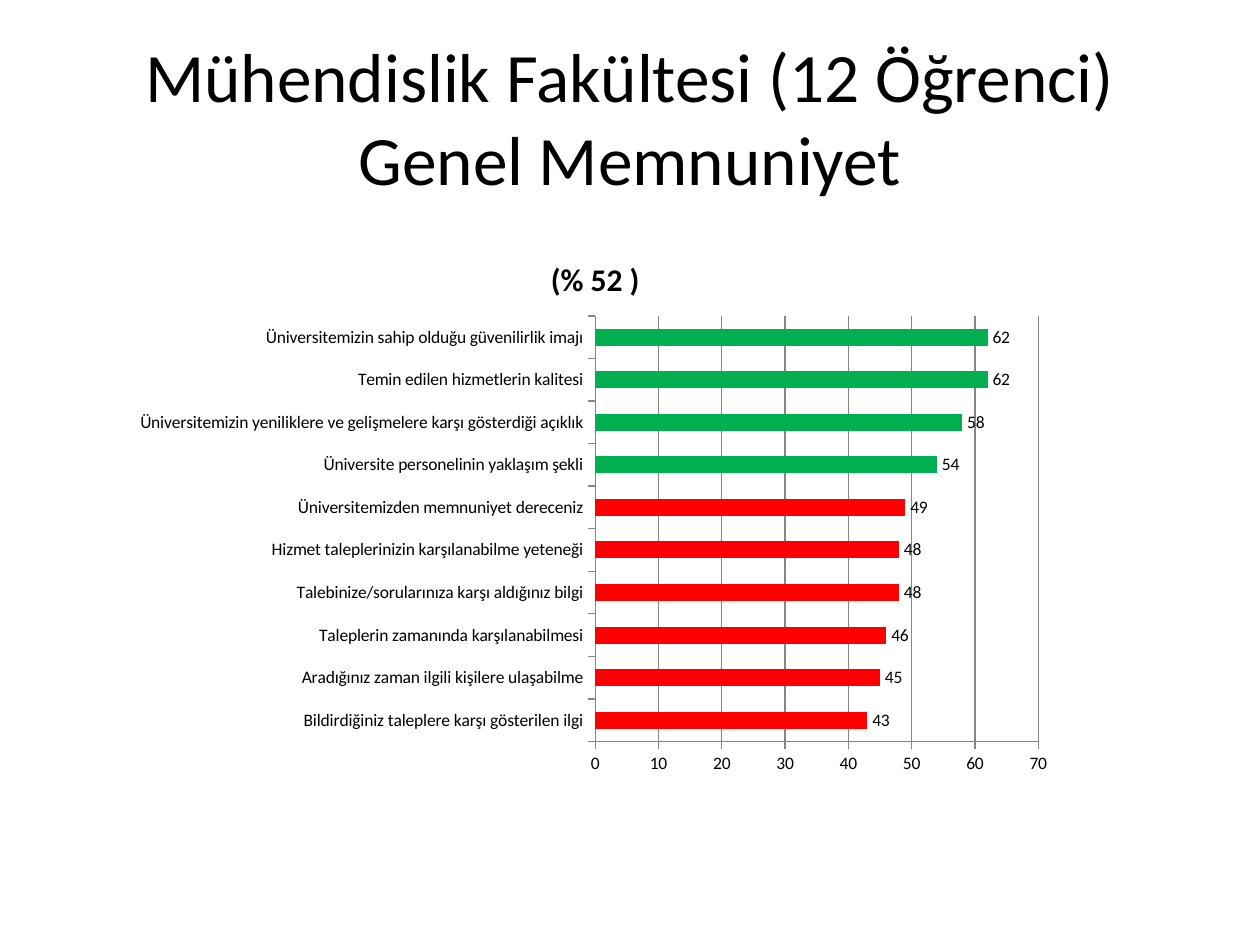
from lxml.etree import SubElement
from pptx import Presentation
from pptx.chart.data import CategoryChartData
from pptx.dml.color import RGBColor
from pptx.enum.chart import XL_CHART_TYPE, XL_LABEL_POSITION, XL_TICK_MARK
from pptx.enum.text import MSO_ANCHOR, PP_ALIGN
from pptx.oxml.ns import qn
from pptx.util import Cm, Pt

TITLE_LINES = ["Mühendislik Fakültesi (12 Öğrenci)", "Genel Memnuniyet"]
CHART_TITLE = "(% 52 )"
SCORES = [
    ("Bildirdiğiniz taleplere karşı gösterilen ilgi", 43),
    ("Aradığınız zaman ilgili kişilere ulaşabilme", 45),
    ("Taleplerin zamanında karşılanabilmesi", 46),
    ("Talebinize/sorularınıza karşı aldığınız bilgi", 48),
    ("Hizmet taleplerinizin karşılanabilme yeteneği", 48),
    ("Üniversitemizden memnuniyet dereceniz", 49),
    ("Üniversite personelinin yaklaşım şekli", 54),
    ("Üniversitemizin yeniliklere ve gelişmelere karşı gösterdiği açıklık", 58),
    ("Temin edilen hizmetlerin kalitesi", 62),
    ("Üniversitemizin sahip olduğu güvenilirlik imajı", 62),
]
AVERAGE = 52
LOW, HIGH, BLACK, GRAY = "FF0000", "00B050", "000000", "868686"
PLOT_AREA = {"x": 0.5, "y": 0.15, "w": 0.47, "h": 0.78}
TITLE_FORMAT = {"name": "Calibri", "size": Pt(39.6), "bold": False}
CHART_FORMAT = {"name": "Calibri", "size": Pt(10)}
CHART_TITLE_FORMAT = {"name": "Calibri", "size": Pt(18), "bold": True}
VALUE_AXIS_FORMAT = {"minimum_scale": 0, "maximum_scale": 70, "major_unit": 10,
                     "has_major_gridlines": True}
LABEL_FORMAT = {"show_value": True, "number_format": "0", "number_format_is_linked": False,
                "position": XL_LABEL_POSITION.OUTSIDE_END}


def color(value):
    return RGBColor.from_string(value)


def apply(target, values):
    for name, value in values.items():
        setattr(target, name, value)


def style_font(font, values):
    apply(font, values)
    font.color.rgb = color(BLACK)


def style_line(line):
    line.color.rgb = color(GRAY)
    line.width = Pt(0.75)


def add_title(page):
    box = page.shapes.add_textbox(Cm(1.27), Cm(0.76), Cm(22.86), Cm(3.18))
    apply(box.text_frame, {"word_wrap": True, "vertical_anchor": MSO_ANCHOR.MIDDLE})
    para = box.text_frame.paragraphs[0]
    para.alignment = PP_ALIGN.CENTER
    para.text = "\n".join(TITLE_LINES)
    for span in para.runs:
        style_font(span.font, TITLE_FORMAT)


def place_plot(chart):
    plot_area = chart.plots[0]._element.getparent()
    layout = plot_area.find(qn("c:layout"))
    if layout is None:
        layout = SubElement(plot_area, qn("c:layout"))
        plot_area.insert(0, layout)
    manual = SubElement(layout, qn("c:manualLayout"))
    settings = {"layoutTarget": "inner", "xMode": "edge", "yMode": "edge", **PLOT_AREA}
    for name, value in settings.items():
        SubElement(manual, qn(f"c:{name}")).set("val", str(value))


def add_scores(page):
    data = CategoryChartData(number_format="0")
    data.categories = [name for name, score in SCORES]
    data.add_series("Series 1", [score for name, score in SCORES])
    chart = page.shapes.add_chart(XL_CHART_TYPE.BAR_CLUSTERED, Cm(2.5), Cm(4.72),
                                  Cm(19), Cm(11), data).chart
    chart.has_legend = False
    style_font(chart.font, CHART_FORMAT)

    chart.has_title = True
    para = chart.chart_title.text_frame.paragraphs[0]
    span = para.add_run()
    span.text = CHART_TITLE
    style_font(span.font, CHART_TITLE_FORMAT)
    chart.chart_title.include_in_layout = False

    apply(chart.value_axis, VALUE_AXIS_FORMAT)
    for axis in (chart.category_axis, chart.value_axis):
        axis.major_tick_mark = XL_TICK_MARK.OUTSIDE
        style_line(axis.format.line)
    style_line(chart.value_axis.major_gridlines.format.line)

    plot = chart.plots[0]
    apply(plot, {"gap_width": 150, "vary_by_categories": False, "has_data_labels": True})
    apply(plot.data_labels, LABEL_FORMAT)
    style_font(plot.data_labels.font, CHART_FORMAT)

    series = plot.series[0]
    series.format.fill.solid()
    series.format.fill.fore_color.rgb = color(LOW)
    for index, (name, score) in enumerate(SCORES):
        if score > AVERAGE:
            fill = series.points[index].format.fill
            fill.solid()
            fill.fore_color.rgb = color(HIGH)
    place_plot(chart)


def main():
    deck = Presentation()
    apply(deck, {"slide_width": Cm(25.4), "slide_height": Cm(19.05)})
    page = deck.slides.add_slide(deck.slide_layouts[6])
    add_title(page)
    add_scores(page)
    deck.save("out.pptx")


if __name__ == "__main__":
    main()
